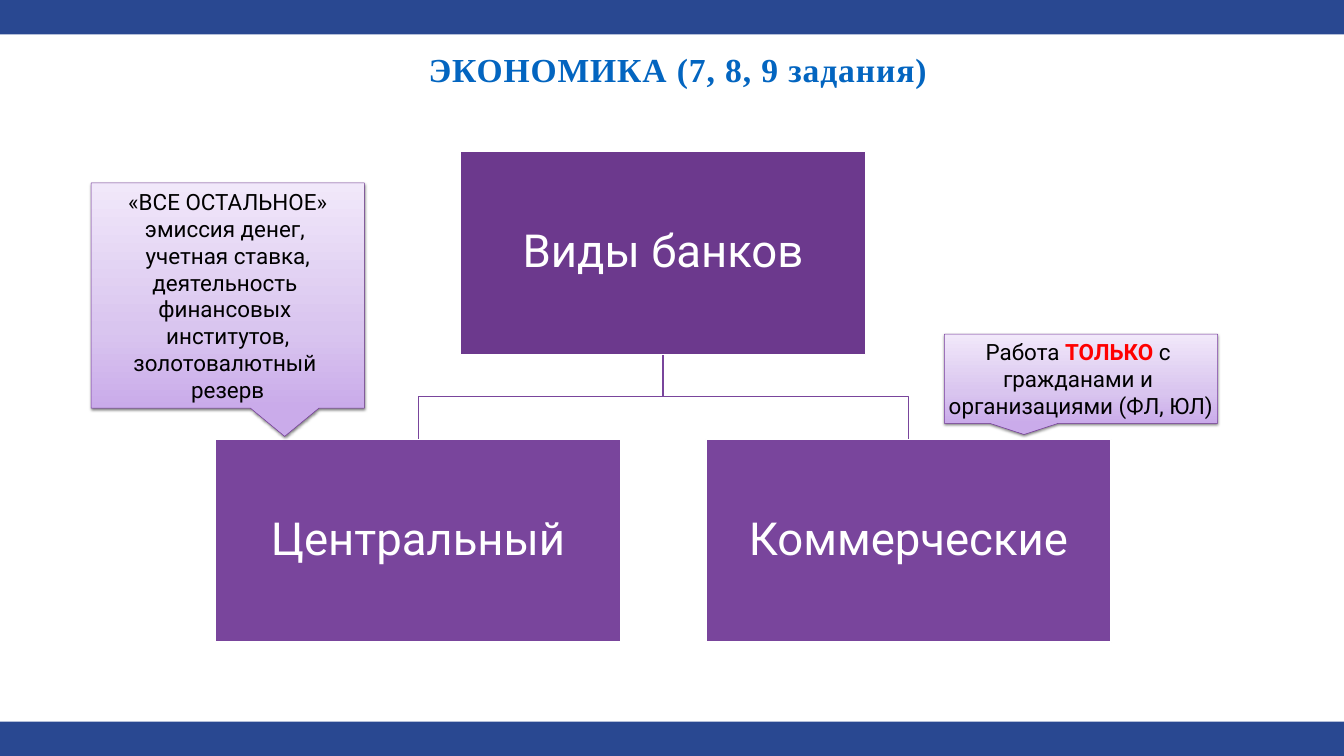
"""Build a slide on the kinds of banks: a small tree with two callouts."""
from lxml import etree
from pptx import Presentation
from pptx.dml.color import RGBColor
from pptx.enum.shapes import MSO_SHAPE as Kind
from pptx.enum.text import MSO_ANCHOR as Anchor, MSO_AUTO_SIZE as Fit, PP_ALIGN as Align
from pptx.oxml import parse_xml
from pptx.oxml.ns import nsdecls, qn
from pptx.util import Pt

PX = 9144
WIDE, HIGH = 2667, 1500
BOX_W, BOX_H = 804, 402
NS = nsdecls("a")


def tint(code):
    return RGBColor.from_string(code)


def style(run, size, face, code, bold=False):
    font = run.font
    font.size, font.name, font.bold = Pt(size), face, bold
    font.color.rgb = tint(code)


deck = Presentation()
deck.slide_width, deck.slide_height = WIDE * PX, HIGH * PX
slide = deck.slides.add_slide(deck.slide_layouts[5])
shapes = slide.shapes

for top in (-1, 1432):
    bar = shapes.add_shape(Kind.RECTANGLE, 0, top * PX, WIDE * PX, 69 * PX)
    bar.shadow.inherit = False
    bar.fill.solid()
    bar.fill.fore_color.rgb = tint("294891")
    bar.line.fill.background()

title = shapes.title
title.left, title.top, title.width, title.height = 818 * PX, 95 * PX, 1055 * PX, 85 * PX
frame = title.text_frame
frame.text = "ЭКОНОМИКА (7, 8, 9 задания)"
frame.auto_size, frame.word_wrap = Fit.NONE, True
frame.vertical_anchor = Anchor.TOP
frame.margin_left = frame.margin_right = 4 * PX
frame.margin_top = frame.margin_bottom = 2 * PX
frame.paragraphs[0].alignment = Align.CENTER
run = frame.paragraphs[0].runs[0]
style(run, 48, "Times New Roman", "0365C0", True)
props = run.font._element
props.set("spc", "130")
props.insert(0, parse_xml(
    f'<a:ln {NS} w="11430"><a:solidFill><a:srgbClr val="F4F5FA"/></a:solidFill></a:ln>'))
props.find(qn("a:solidFill")).addnext(parse_xml(
    f'<a:effectLst {NS}><a:outerShdw blurRad="25400" dist="25400" dir="2700000">'
    '<a:srgbClr val="0365C0"><a:alpha val="50000"/></a:srgbClr></a:outerShdw></a:effectLst>'))

root_x, root_y, leaf_y = 914, 301, 872
mid, low = root_x + BOX_W // 2, root_y + BOX_H
bend = (low + leaf_y) // 2
leaves = [("Центральный", 428), ("Коммерческие", 1401)]

for name, left in leaves:
    end = left + BOX_W // 2
    path = shapes.build_freeform(mid, low, scale=PX)
    path.add_line_segments([(mid, bend), (end, bend), (end, leaf_y)], close=False)
    branch = path.convert_to_shape()
    branch.shadow.inherit = False
    branch.fill.background()
    branch.line.color.rgb = tint("79459C")
    branch.line.width = Pt(2)

boxes = [("Виды банков", root_x, root_y, "6C398D")]
boxes += [(name, left, leaf_y, "79459C") for name, left in leaves]
for name, left, top, code in boxes:
    box = shapes.add_shape(Kind.RECTANGLE, left * PX, top * PX, BOX_W * PX, BOX_H * PX)
    box.shadow.inherit = False
    box.fill.solid()
    box.fill.fore_color.rgb = tint(code)
    box.line.color.rgb = tint("FFFFFF")
    box.line.width = Pt(2)
    frame = box.text_frame
    frame.text = name
    frame.word_wrap, frame.vertical_anchor = True, Anchor.MIDDLE
    frame.margin_left = frame.margin_right = 5 * PX
    frame.margin_top = frame.margin_bottom = 5 * PX
    para = frame.paragraphs[0]
    para.alignment, para.line_spacing = Align.CENTER, 0.9
    style(para.runs[0], 65, "Roboto", "FFFFFF")

central = ["«ВСЕ ОСТАЛЬНОЕ»", "эмиссия денег, ", "учетная ставка,", "деятельность ",
           "финансовых ", "институтов,", "золотовалютный ", "резерв"]
trade = ["Работа |ТОЛЬКО| с ", "гражданами и ", "организациями (ФЛ, ЮЛ)"]
stops = [(0, "CAABEA"), (35, "D9C5EF"), (100, "F1E8FA")]

for left, top, high, flip, lines in [(181, 363, 447, True, central),
                                     (1874, 663, 177, False, trade)]:
    note = shapes.add_shape(Kind.RECTANGULAR_CALLOUT, left * PX, top * PX, 542 * PX, high * PX)
    if flip:
        note._element.spPr.find(qn("a:xfrm")).set("flipH", "1")
    note.fill.gradient()
    grad = note._element.spPr.find(qn("a:gradFill"))
    grad.find(qn("a:lin")).set("ang", "16200000")
    bands = grad.find(qn("a:gsLst"))
    for old in list(bands):
        bands.remove(old)
    for spot, code in stops:
        band = etree.SubElement(bands, qn("a:gs"), pos=str(spot * 1000))
        etree.SubElement(band, qn("a:srgbClr"), val=code)
    note.line.color.rgb = tint("753B9A")
    note.line.width = Pt(0.75)
    note._element.spPr.append(parse_xml(
        f'<a:effectLst {NS}><a:outerShdw blurRad="50800" dist="25400" dir="5400000" rotWithShape="0">'
        '<a:srgbClr val="000000"><a:alpha val="50000"/></a:srgbClr></a:outerShdw></a:effectLst>'))
    frame = note.text_frame
    frame.word_wrap, frame.vertical_anchor = False, Anchor.MIDDLE
    frame.margin_left = frame.margin_right = 8 * PX
    frame.margin_top = frame.margin_bottom = 8 * PX
    for row, line in enumerate(lines):
        para = frame.add_paragraph() if row else frame.paragraphs[0]
        para.alignment = Align.CENTER
        for part, words in enumerate(line.split("|")):
            run = para.add_run()
            run.text = words
            style(run, 32, "Roboto", "FF0000" if part == 1 else "000000", part == 1)

deck.save("out.pptx")
